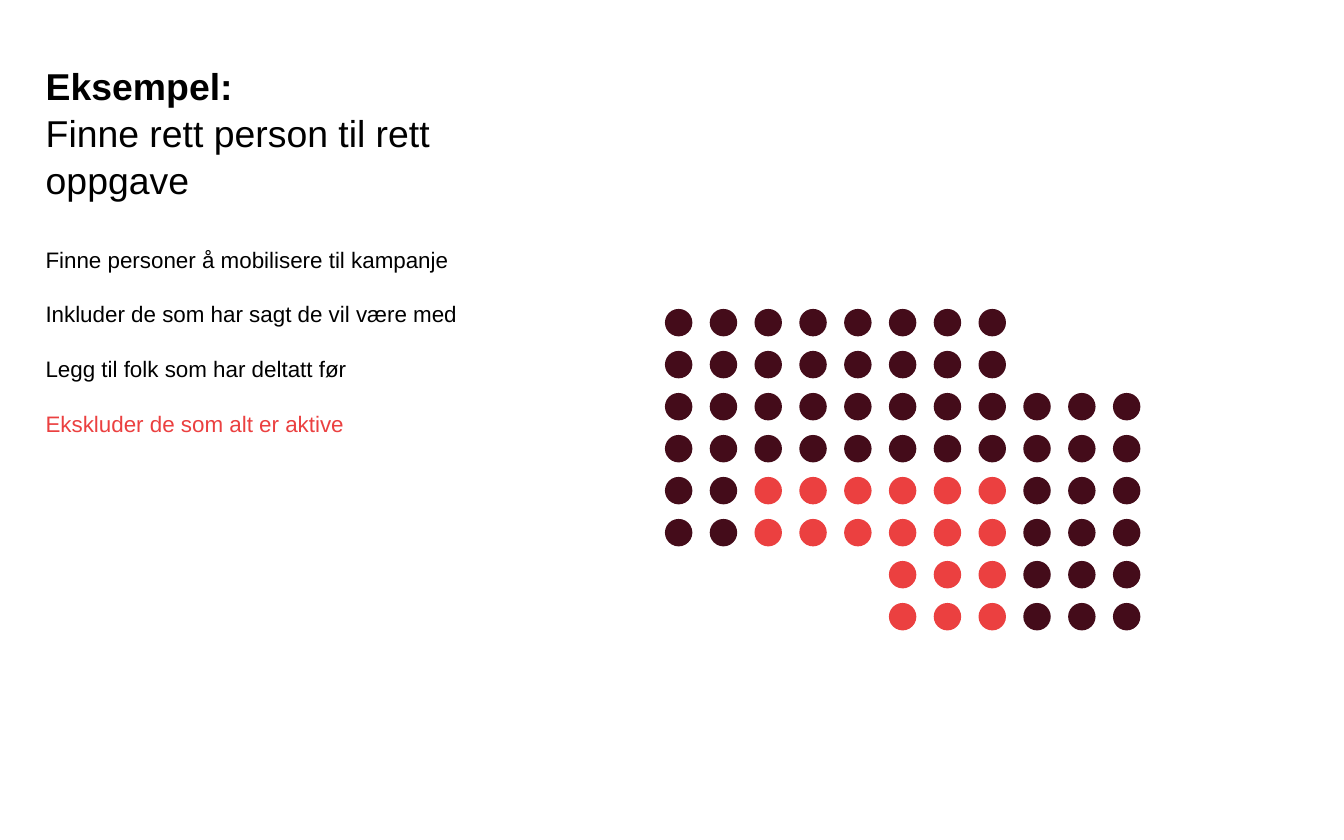
import pptx
import pptx.dml.color
import pptx.enum.shapes
import pptx.enum.text
import pptx.util

Pt = pptx.util.Pt
Anchor = pptx.enum.text.MSO_ANCHOR

THEME = {
    "font": "Arial",
    "title_size": 20,
    "body_size": 12,
    "text": "000000",
    "included": "440C1A",
    "excluded": "EB4040",
}


def color(name):
    return pptx.dml.color.RGBColor.from_string(THEME[name])


def place_text(box, left, top, width, height, anchor):
    """Position a text shape and give its frame the common margins."""
    box.left, box.top, box.width, box.height = map(Pt, (left, top, width, height))
    frame = box.text_frame
    frame.word_wrap = True
    frame.auto_size = pptx.enum.text.MSO_AUTO_SIZE.NONE
    frame.vertical_anchor = anchor
    frame.margin_left = frame.margin_right = Pt(7.2)
    frame.margin_top = frame.margin_bottom = Pt(7.2)
    return frame


deck = pptx.Presentation()
deck.slide_width, deck.slide_height = Pt(720), Pt(450)
page = deck.slides.add_slide(deck.slide_layouts[5])

# Title
frame = place_text(page.shapes.title, 17.3, 49, 221, 66.2, Anchor.BOTTOM)
para = frame.paragraphs[0]
para.alignment = pptx.enum.text.PP_ALIGN.LEFT
para.line_spacing = 1.05
para.font.name = THEME["font"]
para.font.size = Pt(THEME["title_size"])
para.font.color.rgb = color("text")
span = para.add_run()
span.text = "Eksempel:"
span.font.bold = True
para.add_line_break()
span = para.add_run()
span.text = "Finne rett person til rett oppgave"
span.font.bold = False
for span in para.runs:
    span.font.name = THEME["font"]
    span.font.size = Pt(THEME["title_size"])
    span.font.color.rgb = color("text")

# Selection steps
steps = [
    ("Finne personer å mobilisere til kampanje", "text"),
    ("Inkluder de som har sagt de vil være med", "text"),
    ("Legg til folk som har deltatt før", "text"),
    ("Ekskluder de som alt er aktive", "excluded"),
]
box = page.shapes.add_textbox(0, 0, 0, 0)
frame = place_text(box, 17.3, 121.7, 257.8, 256.3, Anchor.TOP)
for index, (text, tone) in enumerate(steps):
    para = frame.add_paragraph() if index else frame.paragraphs[0]
    para.line_spacing = 1.2
    para.space_after = Pt(12)
    span = para.add_run()
    span.text = text
    span.font.name = THEME["font"]
    span.font.size = Pt(THEME["body_size"])
    span.font.color.rgb = color(tone)

# People: "#" is included, "x" is excluded
people = [
    "########   ",
    "########   ",
    "###########",
    "###########",
    "##xxxxxx###",
    "##xxxxxx###",
    "     xxx###",
    "     xxx###",
]
tones = {"#": "included", "x": "excluded"}
grid_left, grid_top = 356.2, 165.5
column_step, row_step, diameter = 24, 22.5, 14.7
for row, line in enumerate(people):
    for column, mark in enumerate(line):
        if mark not in tones:
            continue
        dot = page.shapes.add_shape(
            pptx.enum.shapes.MSO_SHAPE.OVAL,
            Pt(grid_left + column * column_step),
            Pt(grid_top + row * row_step),
            Pt(diameter),
            Pt(diameter),
        )
        dot.shadow.inherit = False
        dot.fill.solid()
        dot.fill.fore_color.rgb = color(tones[mark])
        dot.line.fill.background()

deck.save("out.pptx")
